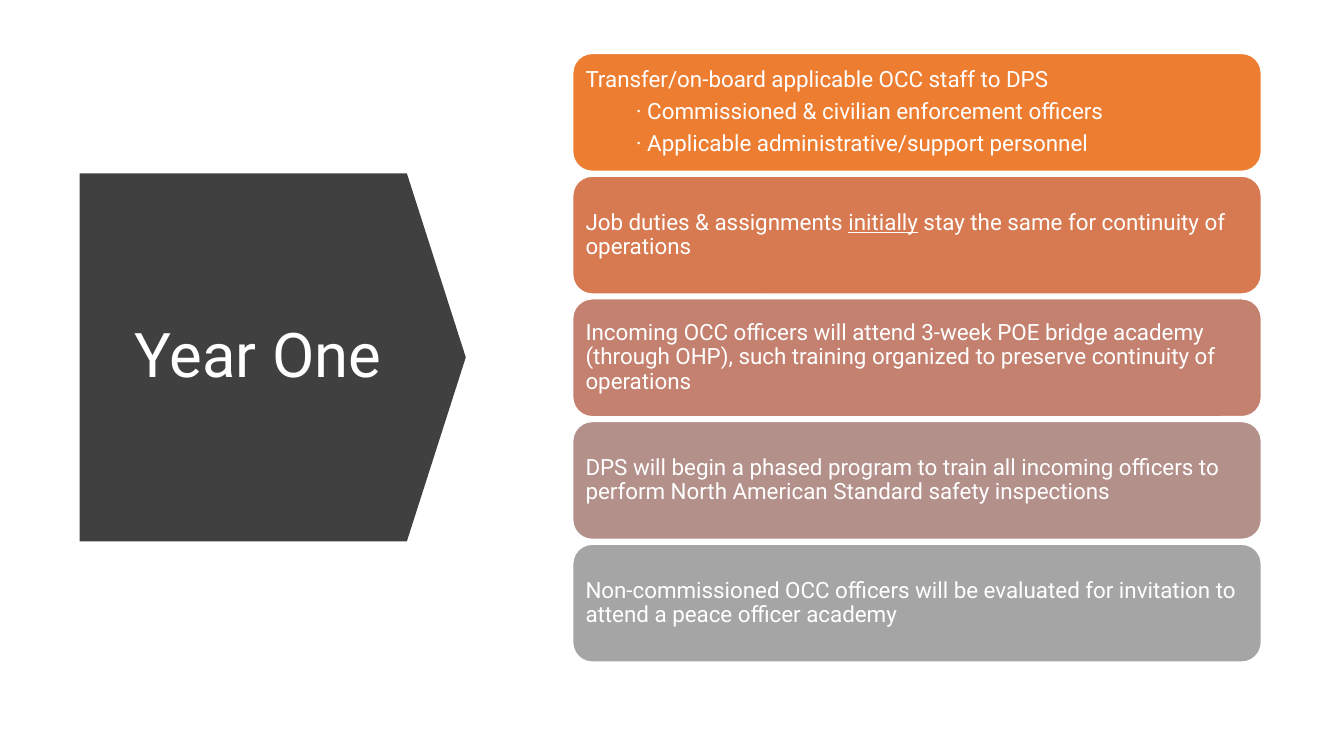
import dataclasses

import pptx
import pptx.dml.color
import pptx.enum.shapes
import pptx.enum.text
import pptx.util

SHAPE = pptx.enum.shapes.MSO_SHAPE
ALIGN = pptx.enum.text.PP_ALIGN
ANCHOR = pptx.enum.text.MSO_ANCHOR


@dataclasses.dataclass(frozen=True)
class Theme:
    font: str = "Roboto"
    title_size: float = 44
    body_size: float = 16
    text: str = "FFFFFF"
    border: str = "FFFFFF"
    arrow: str = "404040"
    steps: tuple = ("ED7D31", "D87A51", "C48170", "B4908B", "A5A5A5")


def rgb(value):
    return pptx.dml.color.RGBColor.from_string(value)


def apply(target, formats):
    for name, value in formats.items():
        setattr(target, name, value)


class SlideBuilder:
    """Places elements on a grid of 100 columns by 100 rows."""

    def __init__(self, deck, theme):
        self.theme = theme
        self.column = deck.slide_width / 100
        self.row = deck.slide_height / 100
        self.shapes = deck.slides.add_slide(deck.slide_layouts[6]).shapes

    def place(self, left, top, width, height):
        return [round(value) for value in (left * self.column, top * self.row,
                                           width * self.column, height * self.row)]

    def shape(self, kind, area, fill, border=None):
        shape = self.shapes.add_shape(kind, *self.place(*area))
        shape.shadow.inherit = False
        shape.fill.solid()
        shape.fill.fore_color.rgb = rgb(fill)
        if border:
            shape.line.color.rgb = rgb(border)
            shape.line.width = pptx.util.Pt(1)
        else:
            shape.line.fill.background()
        return shape

    def fill_text(self, frame, lines, size, align, space_after=0):
        """Each line is (indent in inches, (plain, underlined, plain, ...))."""
        apply(frame, {"word_wrap": True, "vertical_anchor": ANCHOR.MIDDLE})
        for number, (indent, pieces) in enumerate(lines):
            paragraph = frame.add_paragraph() if number else frame.paragraphs[0]
            apply(paragraph, {"alignment": align, "line_spacing": 0.9,
                              "space_after": pptx.util.Pt(space_after)})
            if indent:
                paragraph._p.get_or_add_pPr().set("marL", str(pptx.util.Inches(indent)))
            for position, piece in enumerate(pieces):
                run = paragraph.add_run()
                run.text = piece
                apply(run.font, {"name": self.theme.font, "size": pptx.util.Pt(size),
                                 "underline": True if position % 2 else None})
                run.font.color.rgb = rgb(self.theme.text)

    def arrow(self, area):
        arrow = self.shape(SHAPE.DOWN_ARROW, area, self.theme.arrow)
        arrow.rotation = 270
        arrow.adjustments[0] = 1
        arrow.adjustments[1] = 0.16

    def title(self, area, text):
        box = self.shapes.add_textbox(*self.place(*area))
        self.fill_text(box.text_frame, [(0, (text,))], self.theme.title_size, ALIGN.CENTER)

    def step(self, area, fill, lines):
        card = self.shape(SHAPE.ROUNDED_RECTANGLE, area, fill, self.theme.border)
        inset = pptx.util.Inches(0.07)
        apply(card.text_frame, {f"margin_{side}": inset
                                for side in ("left", "top", "right", "bottom")})
        self.fill_text(card.text_frame, lines, self.theme.body_size, ALIGN.LEFT,
                       space_after=5.6)


STEPS = [
    [(0, ("Transfer/on-board applicable OCC staff to DPS",)),
     (0.5, ("· Commissioned & civilian enforcement officers",)),
     (0.5, ("· Applicable administrative/support personnel",))],
    [(0, ("Job duties & assignments ", "initially",
          " stay the same for continuity of operations"))],
    [(0, ("Incoming OCC officers will attend 3-week POE bridge academy (through OHP), "
          "such training organized to preserve continuity of operations",))],
    [(0, ("DPS will begin a phased program to train all incoming officers to "
          "perform North American Standard safety inspections",))],
    [(0, ("Non-commissioned OCC officers will be evaluated for invitation to "
          "attend a peace officer academy",))],
]


def main():
    deck = pptx.Presentation()
    deck.slide_width = pptx.util.Inches(13.33)
    deck.slide_height = pptx.util.Inches(7.5)
    theme = Theme()
    slide = SlideBuilder(deck, theme)

    # Year heading
    slide.arrow((6.6, 21.73, 27.38, 51.07))
    slide.title((8.4, 28.67, 21.6, 37.2), "Year One")

    # Stack of steps
    first_top, pitch, height = 7.07, 16.23, 15.6
    for number, (fill, lines) in enumerate(zip(theme.steps, STEPS)):
        slide.step((42.61, first_top + number * pitch, 51.24, height), fill, lines)

    deck.save("out.pptx")


if __name__ == "__main__":
    main()
